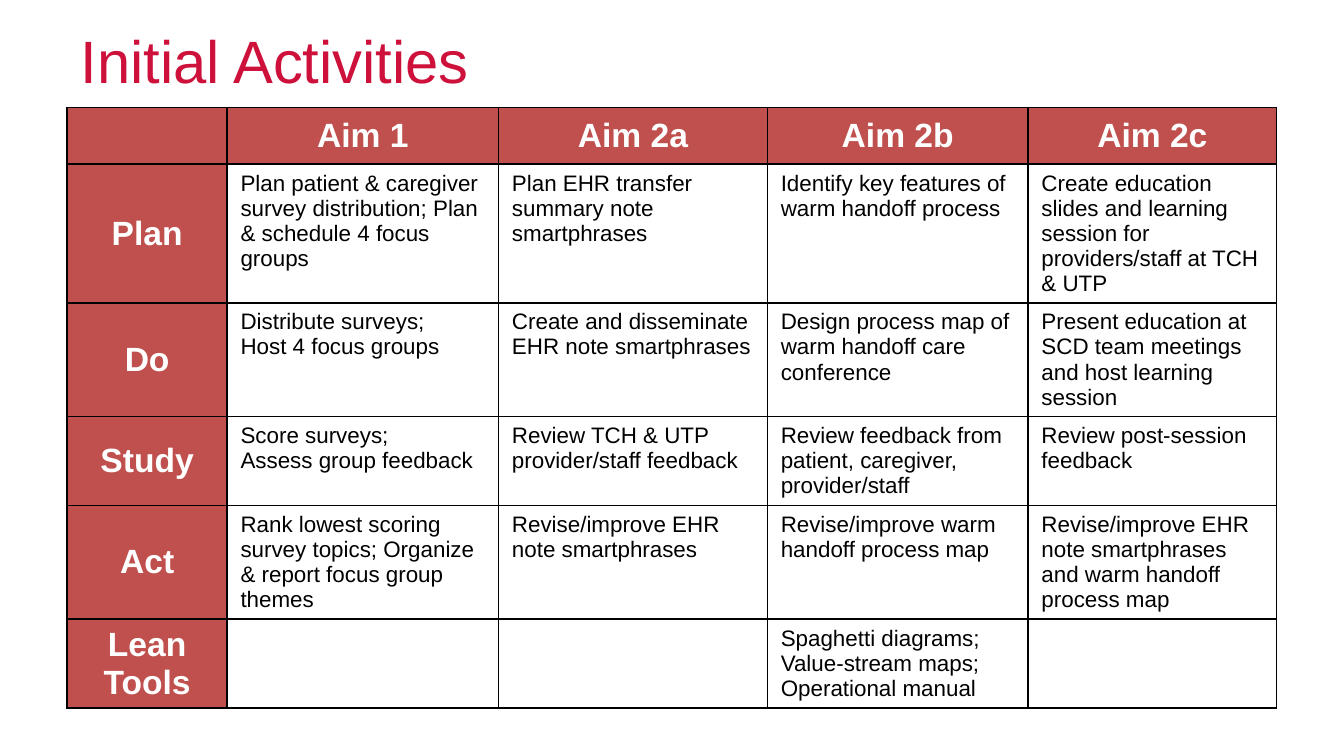
import pptx
import pptx.dml.color
import pptx.enum.text
import pptx.oxml.ns
import pptx.util
from lxml import etree

Inches = pptx.util.Inches
Pt = pptx.util.Pt
RGBColor = pptx.dml.color.RGBColor
qn = pptx.oxml.ns.qn
ALIGN = pptx.enum.text.PP_ALIGN
ANCHOR = pptx.enum.text.MSO_ANCHOR

CRIMSON = RGBColor(0xCD, 0x11, 0x3B)
BRICK = RGBColor(0xC0, 0x50, 0x4D)
WHITE = RGBColor(0xFF, 0xFF, 0xFF)
BLACK = RGBColor(0, 0, 0)
FONT = "Arial"

COLUMN_WIDTHS = [1.19, 2.02, 2, 1.94, 1.85]
ROW_HEIGHTS = [0.42] + [0.65] * 5
ACTIVITIES = [
    ["", "Aim 1", "Aim 2a", "Aim 2b", "Aim 2c"],
    ["Plan",
     "Plan patient & caregiver survey distribution; Plan & schedule 4 focus groups",
     "Plan EHR transfer summary note smartphrases",
     "Identify key features of warm handoff process",
     "Create education slides and learning session for providers/staff at TCH & UTP"],
    ["Do",
     "Distribute surveys;\nHost 4 focus groups",
     "Create and disseminate EHR note smartphrases",
     "Design process map of warm handoff care conference",
     "Present education at SCD team meetings and host learning session"],
    ["Study",
     "Score surveys;\nAssess group feedback",
     "Review TCH & UTP provider/staff feedback",
     "Review feedback from patient, caregiver, provider/staff",
     "Review post-session feedback"],
    ["Act",
     "Rank lowest scoring survey topics; Organize & report focus group themes",
     "Revise/improve EHR note smartphrases",
     "Revise/improve warm handoff process map",
     "Revise/improve EHR note smartphrases and warm handoff process map"],
    ["Lean Tools", "", "",
     "Spaghetti diagrams;\nValue-stream maps;\nOperational manual", ""],
]


def add_text(tf, text, size, color, bold=False, align=ALIGN.LEFT):
    for i, line in enumerate(text.split("\n")):
        p = tf.paragraphs[0] if i == 0 else tf.add_paragraph()
        p.alignment = align
        r = p.add_run()
        r.text = line
        r.font.name = FONT
        r.font.size = Pt(size)
        r.font.bold = bold
        r.font.color.rgb = color


def set_title(s, text):
    sp = s.shapes.title
    sp.left, sp.top = Inches(0.5), Inches(0.15)
    sp.width, sp.height = Inches(9), Inches(0.59)
    tf = sp.text_frame
    tf.auto_size = pptx.enum.text.MSO_AUTO_SIZE.NONE
    tf.word_wrap = True
    tf.vertical_anchor = ANCHOR.MIDDLE
    add_text(tf, text, 32, CRIMSON)


def set_borders(cell, color, width):
    tc_pr = cell._tc.get_or_add_tcPr()
    for side in ("a:lnL", "a:lnR", "a:lnT", "a:lnB"):
        ln = etree.SubElement(tc_pr, qn(side), w=str(Pt(width)))
        fill = etree.SubElement(ln, qn("a:solidFill"))
        etree.SubElement(fill, qn("a:srgbClr"), val=str(color))


def format_cell(cell, text, heading):
    set_borders(cell, BLACK, 1)
    if heading:
        cell.fill.solid()
        cell.fill.fore_color.rgb = BRICK
        cell.vertical_anchor = ANCHOR.MIDDLE
    else:
        cell.fill.background()
    if text and heading:
        add_text(cell.text_frame, text, 18, WHITE, True, ALIGN.CENTER)
    elif text:
        add_text(cell.text_frame, text, 12, BLACK)


def add_activity_table(s):
    table = s.shapes.add_table(
        len(ROW_HEIGHTS), len(COLUMN_WIDTHS), Inches(0.5), Inches(0.8),
        Inches(sum(COLUMN_WIDTHS)), Inches(sum(ROW_HEIGHTS))).table
    table.horz_banding = False
    for column, width in zip(table.columns, COLUMN_WIDTHS):
        column.width = Inches(width)
    for row, height in zip(table.rows, ROW_HEIGHTS):
        row.height = Inches(height)
    for i, texts in enumerate(ACTIVITIES):
        for j, text in enumerate(texts):
            format_cell(table.cell(i, j), text, i == 0 or j == 0)


def main():
    prs = pptx.Presentation()
    prs.slide_width = Inches(10)
    prs.slide_height = Inches(10 * 9 / 16)
    s = prs.slides.add_slide(prs.slide_layouts[5])
    set_title(s, "Initial Activities")
    add_activity_table(s)
    prs.save("out.pptx")


if __name__ == "__main__":
    main()
